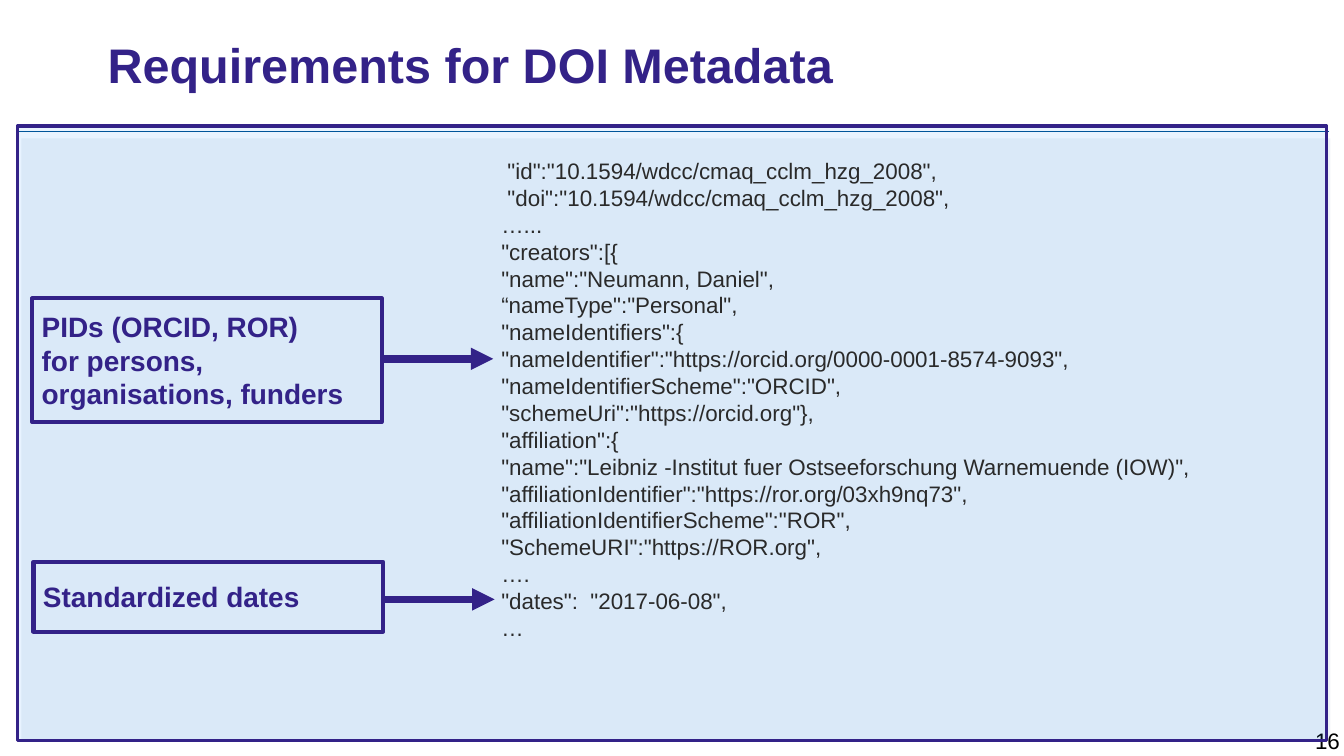
from pptx import Presentation
from pptx.dml.color import RGBColor
from pptx.enum.shapes import MSO_CONNECTOR, MSO_SHAPE
from pptx.enum.text import MSO_ANCHOR, PP_ALIGN
from pptx.oxml.ns import qn
from pptx.util import Inches, Pt
from lxml import etree

RECTANGLE = MSO_SHAPE.RECTANGLE
STRAIGHT = MSO_CONNECTOR.STRAIGHT
TOP, MIDDLE = MSO_ANCHOR.TOP, MSO_ANCHOR.MIDDLE
LEFT, RIGHT = PP_ALIGN.LEFT, PP_ALIGN.RIGHT

# The grid has square cells: 100 columns by 56.25 rows
CELL = 0.1
COLUMNS, ROWS = 100, 56.25

FONT = "Arial"
INDIGO, NAVY, RULE_BLUE, BLUE = "332288", "005191", "005190", "007EFF"
DARK, BLACK = "2A2A2A", "000000"

METADATA = """ "id":"10.1594/wdcc/cmaq_cclm_hzg_2008",
 "doi":"10.1594/wdcc/cmaq_cclm_hzg_2008",
…...
"creators":[{
"name":"Neumann, Daniel",
“nameType":"Personal",
"nameIdentifiers":{
"nameIdentifier":"https://orcid.org/0000-0001-8574-9093",
"nameIdentifierScheme":"ORCID",
"schemeUri":"https://orcid.org"},
"affiliation":{
"name":"Leibniz -Institut fuer Ostseeforschung Warnemuende (IOW)",
"affiliationIdentifier":"https://ror.org/03xh9nq73",
"affiliationIdentifierScheme":"ROR",
"SchemeURI":"https://ROR.org",
….
"dates":  "2017-06-08",
…"""

# Text, left column, top row, height and arrow row, counted from the panel's corner
REQUIREMENTS = [
    ("PIDs (ORCID, ROR)\vfor persons, organisations, funders", 1.1, 12.8, 9.2, 17.3),
    ("Standardized dates", 1.2, 32.4, 5.2, 35.2),
]


def color(hex_string):
    return RGBColor.from_string(hex_string)


def grid(*cells):
    return [Inches(cell * CELL) for cell in cells]


def write(shape, text, size, hex_string, bold=False, align=LEFT, anchor=TOP,
          insets=(0, 0, 0, 0)):
    frame = shape.text_frame
    frame.word_wrap = True
    frame.vertical_anchor = anchor
    (frame.margin_left, frame.margin_top,
     frame.margin_right, frame.margin_bottom) = grid(*insets)
    frame.text = text
    for paragraph in frame.paragraphs:
        paragraph.alignment = align
        for run in paragraph.runs:
            run.font.name = FONT
            run.font.size = Pt(size)
            run.font.bold = bold
            run.font.color.rgb = color(hex_string)


def add_rectangle(slide, box, fill=None, opacity=100, line=None, width=0):
    shape = slide.shapes.add_shape(RECTANGLE, *grid(*box))
    shape.shadow.inherit = False
    if fill:
        shape.fill.solid()
        shape.fill.fore_color.rgb = color(fill)
        fill_color = shape._element.spPr.find(qn("a:solidFill"))[0]
        etree.SubElement(fill_color, qn("a:alpha")).set("val", str(opacity * 1000))
    else:
        shape.fill.background()
    if line:
        shape.line.color.rgb = color(line)
        shape.line.width = Pt(width)
    else:
        shape.line.fill.background()
    return shape


def add_line(slide, start, end, row, hex_string, width, arrow=False):
    connector = slide.shapes.add_connector(STRAIGHT, *grid(start, row, end, row))
    connector.line.color.rgb = color(hex_string)
    connector.line.width = Pt(width)
    properties = connector._element.spPr
    if arrow:
        outline = properties.find(qn("a:ln"))
        etree.SubElement(outline, qn("a:tailEnd")).set("type", "triangle")
    etree.SubElement(properties, qn("a:effectLst"))


def add_title(slide, box):
    title = slide.shapes.add_textbox(*grid(*box))
    write(title, "Requirements for DOI Metadata", 26, INDIGO, bold=True, anchor=MIDDLE)


def add_page_number(slide, box):
    number = slide.shapes.add_textbox(*grid(*box))
    write(number, "16", 12, BLACK, align=RIGHT)


def add_background(slide, box):
    # Pale tint with a thin rule just above it
    left, top, width, height = box
    add_rectangle(slide, (left + 0.3, top + 0.9, width, height - 0.9), NAVY, 6)
    add_line(slide, left + width + 0.2, left, top + 0.4, RULE_BLUE, 0.75)


def add_metadata(slide, box):
    listing = slide.shapes.add_textbox(*grid(*box))
    write(listing, METADATA, 12, DARK, insets=(0.6, 0.6, 0, 0))


def add_requirement(slide, box, arrow_row, text):
    # Framed label with an arrow to its place in the listing
    left, top, width, height = box
    label = add_rectangle(slide, box, line=INDIGO, width=2.25)
    write(label, text, 15, INDIGO, bold=True, anchor=MIDDLE, insets=(0.7,) * 4)
    add_line(slide, left + width, left + width + 8.3, arrow_row, INDIGO, 4, arrow=True)


def add_panel(slide, box):
    left, top, width, height = box
    add_rectangle(slide, box, BLUE, 9, INDIGO, 2)
    add_metadata(slide, (left + 35.4, top + 1.7, 55.2, 37))
    for text, column, row, label_height, arrow_row in REQUIREMENTS:
        add_requirement(slide, (left + column, top + row, 26, label_height),
                        top + arrow_row, text)


def main():
    presentation = Presentation()
    presentation.slide_width, presentation.slide_height = grid(COLUMNS, ROWS)
    slide = presentation.slides.add_slide(presentation.slide_layouts[6])
    panel_box = (1.3, 9.4, 97.4, 45.7)
    add_background(slide, panel_box)
    add_page_number(slide, (95.6, 54.1, 4.1, 3))
    add_title(slide, (8, 1, 79.1, 7.5))
    add_panel(slide, panel_box)
    presentation.save("out.pptx")


if __name__ == "__main__":
    main()
